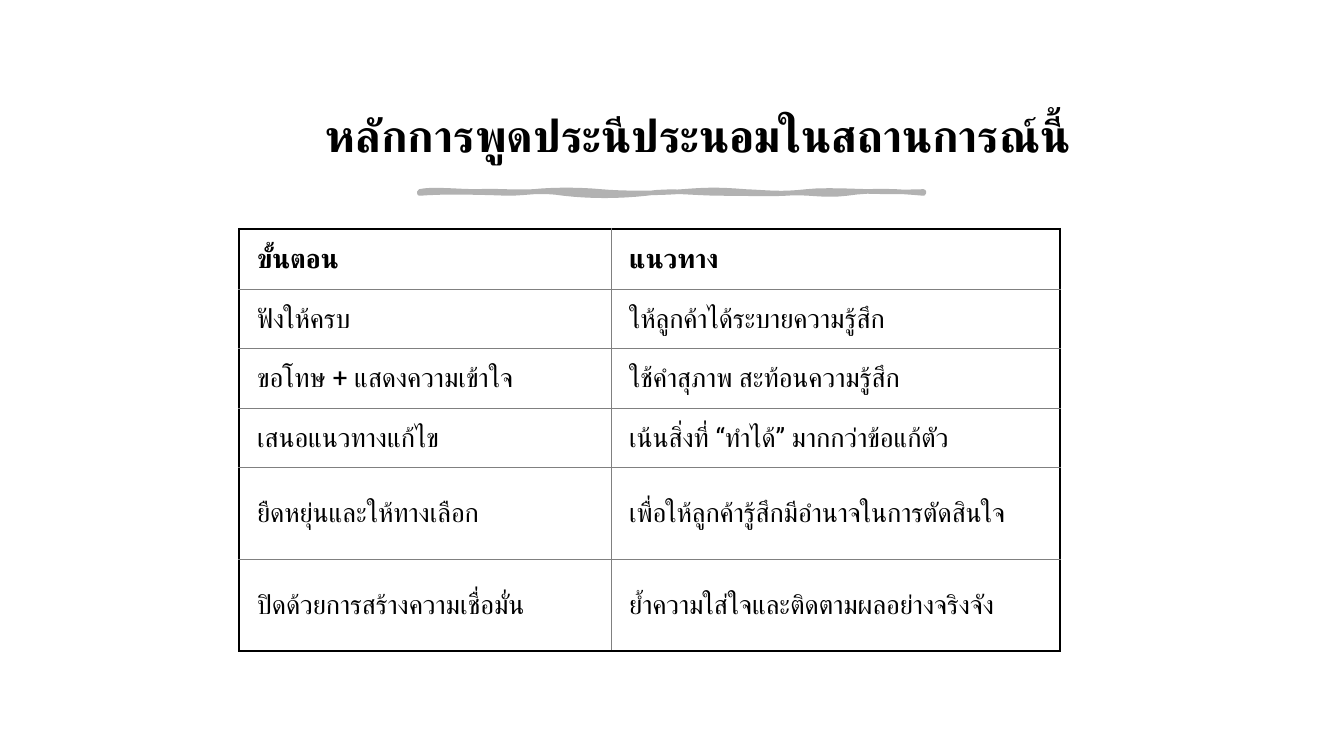
from lxml.etree import SubElement
from pptx import Presentation
from pptx.dml.color import RGBColor
from pptx.enum.text import MSO_ANCHOR as Anchor, PP_ALIGN as Align
from pptx.oxml.ns import qn
from pptx.util import Inches, Pt

FONT = "Roboto"
BLACK, GRAY, BRUSH = "000000", "808080", "B2B2B2"
TITLE = "หลักการพูดประนีประนอมในสถานการณ์นี้"
STEPS = [
    ("ขั้นตอน", "แนวทาง"),
    ("ฟังให้ครบ", "ให้ลูกค้าได้ระบายความรู้สึก"),
    ("ขอโทษ + แสดงความเข้าใจ", "ใช้คำสุภาพ สะท้อนความรู้สึก"),
    ("เสนอแนวทางแก้ไข", "เน้นสิ่งที่ “ทำได้” มากกว่าข้อแก้ตัว"),
    ("ยืดหยุ่นและให้ทางเลือก", "เพื่อให้ลูกค้ารู้สึกมีอำนาจในการตัดสินใจ"),
    ("ปิดด้วยการสร้างความเชื่อมั่น", "ย้ำความใส่ใจและติดตามผลอย่างจริงจัง"),
]
COLUMN_WIDTHS = [3.69, 4.45]
ROW_HEIGHTS = [0.6, 0.59, 0.59, 0.59, 0.91, 0.91]
BRUSH_START = (4.16, 1.9)
BRUSH_CURVES = [
    (4.28, 1.87, 4.54, 1.9, 4.73, 1.9), (4.92, 1.89, 5.09, 1.91, 5.29, 1.9),
    (5.49, 1.88, 5.74, 1.88, 5.96, 1.9), (6.17, 1.92, 6.53, 1.92, 6.77, 1.9),
    (7.02, 1.88, 7.14, 1.88, 7.39, 1.9), (7.63, 1.91, 7.74, 1.93, 8, 1.9),
    (8.26, 1.87, 8.67, 1.92, 9.16, 1.9), (9.17, 1.91, 9.16, 1.91, 9.16, 1.92),
    (8.95, 1.9, 8.65, 1.88, 8.4, 1.92), (8.15, 1.95, 8.01, 1.9, 7.79, 1.92),
    (7.56, 1.93, 7.47, 1.92, 7.17, 1.92), (6.87, 1.92, 6.67, 1.88, 6.41, 1.92),
    (6.14, 1.95, 5.85, 1.95, 5.59, 1.92), (5.34, 1.88, 5.23, 1.92, 5.03, 1.92),
    (4.83, 1.91, 4.38, 1.9, 4.16, 1.92),
]


def color(value):
    """Turn a hex string into a colour."""
    return RGBColor.from_string(value)


def add_span(para, text, size, bold):
    """Add one run in the slide font, for Latin and Thai alike."""
    span = para.add_run()
    span.text = text
    span.font.name, span.font.size, span.font.bold = FONT, Pt(size), bold
    span.font.color.rgb = color(BLACK)
    SubElement(span.font._element, qn("a:cs"), typeface=FONT)


def set_title(page):
    """Place and fill the title placeholder."""
    box = page.shapes.title
    box.left, box.top = Inches(0.96), Inches(1)
    box.width, box.height = Inches(11.93), Inches(0.74)
    frame = box.text_frame
    frame.word_wrap = True
    frame.vertical_anchor = Anchor.MIDDLE
    para = frame.paragraphs[0]
    para.alignment, para.line_spacing = Align.CENTER, 0.9
    add_span(para, TITLE, 32, True)


def curve_points(start, curves, steps=8):
    """Sample a chain of cubic curves as points."""
    points = []
    x0, y0 = start
    for x1, y1, x2, y2, x3, y3 in curves:
        for step in range(1, steps + 1):
            t = step / steps
            a, b, c, d = (1 - t) ** 3, 3 * t * (1 - t) ** 2, 3 * t * t * (1 - t), t ** 3
            points.append((Inches(a * x0 + b * x1 + c * x2 + d * x3),
                           Inches(a * y0 + b * y1 + c * y2 + d * y3)))
        x0, y0 = x3, y3
    return points


def add_brush_stroke(page):
    """Draw the wavy rule below the title."""
    x, y = BRUSH_START
    builder = page.shapes.build_freeform(Inches(x), Inches(y))
    builder.add_line_segments(curve_points(BRUSH_START, BRUSH_CURVES), close=True)
    stroke = builder.convert_to_shape()
    stroke.shadow.inherit = False
    stroke.fill.solid()
    stroke.fill.fore_color.rgb = color(BRUSH)
    stroke.line.color.rgb = color(BRUSH)
    stroke.line.width = Pt(3.25)


def set_borders(cell, outer_sides):
    """Give a cell heavy black outer sides and thin gray inner ones."""
    props = cell._tc.get_or_add_tcPr()
    for side in "LRTB":
        shade, width = (BLACK, 1.5) if side in outer_sides else (GRAY, 0.5)
        line = SubElement(props, qn(f"a:ln{side}"), w=str(Pt(width)))
        fill = SubElement(line, qn("a:solidFill"))
        SubElement(fill, qn("a:srgbClr"), val=shade)


def fill_cell(cell, text, bold, outer_sides):
    """Format one cell and write its text."""
    set_borders(cell, outer_sides)
    cell.fill.background()
    cell.vertical_anchor = Anchor.MIDDLE
    cell.margin_left = Inches(0.18)
    cell.margin_top = cell.margin_right = cell.margin_bottom = Inches(0.14)
    add_span(cell.text_frame.paragraphs[0], text, 19, bold)


def add_steps_table(page):
    """Add the table of steps and approaches."""
    table = page.shapes.add_table(
        len(STEPS), len(COLUMN_WIDTHS), Inches(2.37), Inches(2.27),
        Inches(sum(COLUMN_WIDTHS)), Inches(sum(ROW_HEIGHTS))).table
    table.first_row = table.horz_banding = False
    for column, width in zip(table.columns, COLUMN_WIDTHS):
        column.width = Inches(width)
    last = len(STEPS) - 1
    for index, texts in enumerate(STEPS):
        table.rows[index].height = Inches(ROW_HEIGHTS[index])
        row_side = {0: "T", last: "B"}.get(index, "")
        for place, text in enumerate(texts):
            fill_cell(table.cell(index, place), text, index == 0, "LR"[place] + row_side)


def main():
    """Build the slide and save it."""
    deck = Presentation()
    deck.slide_width, deck.slide_height = Inches(13.33), Inches(7.5)
    page = deck.slides.add_slide(deck.slide_layouts[5])
    set_title(page)
    add_brush_stroke(page)
    add_steps_table(page)
    deck.save("out.pptx")


if __name__ == "__main__":
    main()
